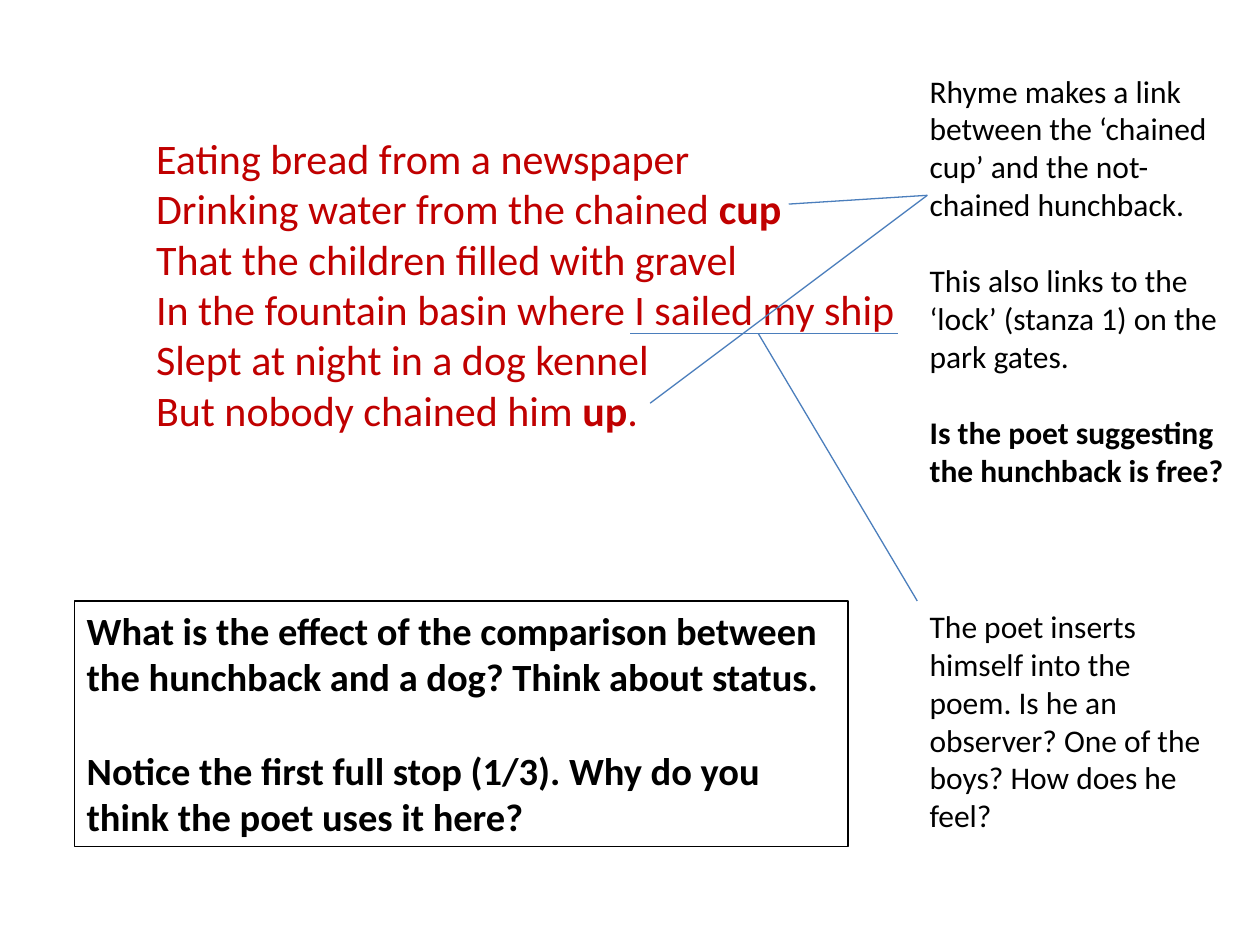
from lxml.etree import SubElement
from pptx import Presentation
from pptx.dml.color import RGBColor
from pptx.enum.shapes import MSO_CONNECTOR as Line, MSO_SHAPE as Shape
from pptx.enum.text import MSO_ANCHOR as Anchor, MSO_AUTO_SIZE as Fit, PP_ALIGN as Align
from pptx.oxml.ns import qn
from pptx.util import Inches, Pt

# Content: each paragraph is a list of (text, bold) spans
POEM = [
    [("Eating bread from a newspaper", False)],
    [("Drinking water from the chained ", False), ("cup", True)],
    [("That the children filled with gravel", False)],
    [("In the fountain basin where I sailed my ship", False)],
    [("Slept at night in a dog kennel", False)],
    [("But nobody chained him ", False), ("up", True), (".", False)],
]
RHYME_NOTE = [
    [("Rhyme makes a link between the ‘chained cup’ and the not-chained hunchback.", False)],
    [("This also links to the ‘lock’ (stanza 1) on the park gates.", False)],
    [("Is the poet suggesting the hunchback is free?", True)],
]
POET_NOTE = [
    [("The poet inserts himself into the poem. Is he an observer? "
      "One of the boys? How does he feel?", False)],
]
QUESTIONS = [
    [("What is the effect of the comparison between the hunchback and a dog? "
      "Think about status.", True)],
    [("Notice the first full stop (1/3). Why do you think the poet uses it here?", True)],
]

# Layout: shares of the slide in percent
WIDTH, HEIGHT = Inches(10), Inches(7.5)
NOTE_LEFT, LOWER_TOP = 72.8, 63.6
RHYME_POINT = (73.6, 20.67)
UNDERLINE_Y = 35.33

# paragraphs, (left, top, width, height), size, colour, gap, anchor, framed
BLOCKS = [
    (POEM, (11.4, 13.2, 63.8, 33.6), 24, "C00000", 0, Anchor.MIDDLE, False),
    (RHYME_NOTE, (NOTE_LEFT, 6.93, 26, 45.73), 18, "000000", 22, Anchor.TOP, False),
    (POET_NOTE, (NOTE_LEFT, LOWER_TOP, 24.4, 25.6), 18, "000000", 0, Anchor.TOP, False),
    (QUESTIONS, (5.9, LOWER_TOP, 61.4, 26), 22, "000000", 26.86, Anchor.TOP, True),
]
LINKS = [
    ((62.6, 21.6), RHYME_POINT),                       # cup
    ((51.6, 42.67), RHYME_POINT),                      # up
    ((50, UNDERLINE_Y), (71.3, UNDERLINE_Y)),          # underline
    ((60.2, UNDERLINE_Y), (NOTE_LEFT, LOWER_TOP)),     # poet note
]


def colour(value):
    return RGBColor.from_string(value)


def place(x, y):
    return int(WIDTH * x / 100), int(HEIGHT * y / 100)


def set_all(target, values):
    for name, value in values.items():
        setattr(target, name, value)


def add_block(page, paragraphs, area, size, ink, gap, anchor, framed):
    bounds = place(*area[:2]) + place(*area[2:])
    if framed:
        box = page.shapes.add_shape(Shape.RECTANGLE, *bounds)
        box.shadow.inherit = False
        box.fill.background()
        box.line.color.rgb = colour("000000")
        box.line.width = Pt(0.75)
    else:
        box = page.shapes.add_textbox(*bounds)
    frame = box.text_frame
    set_all(frame, {"word_wrap": True, "vertical_anchor": anchor,
                    "auto_size": Fit.SHAPE_TO_FIT_TEXT})
    for index, spans in enumerate(paragraphs):
        para = frame.add_paragraph() if index else frame.paragraphs[0]
        set_all(para, {"alignment": Align.LEFT, "space_before": Pt(gap if index else 0)})
        for text, bold in spans:
            span = para.add_run()
            span.text = text
            set_all(span.font, {"name": "Calibri", "size": Pt(size), "bold": bold})
            span.font.color.rgb = colour(ink)


def add_link(page, start, end):
    link = page.shapes.add_connector(Line.STRAIGHT, *place(*start), *place(*end))
    link.line.color.rgb = colour("4B7EBC")
    link.line.width = Pt(0.75)
    SubElement(link._element.spPr, qn("a:effectLst"))


def main():
    deck = Presentation()
    set_all(deck, {"slide_width": WIDTH, "slide_height": HEIGHT})
    page = deck.slides.add_slide(deck.slide_layouts[6])
    # Poem, notes and questions
    for block in BLOCKS:
        add_block(page, *block)
    # Lines from the poem to the notes
    for start, end in LINKS:
        add_link(page, start, end)
    deck.save("out.pptx")


if __name__ == "__main__":
    main()
